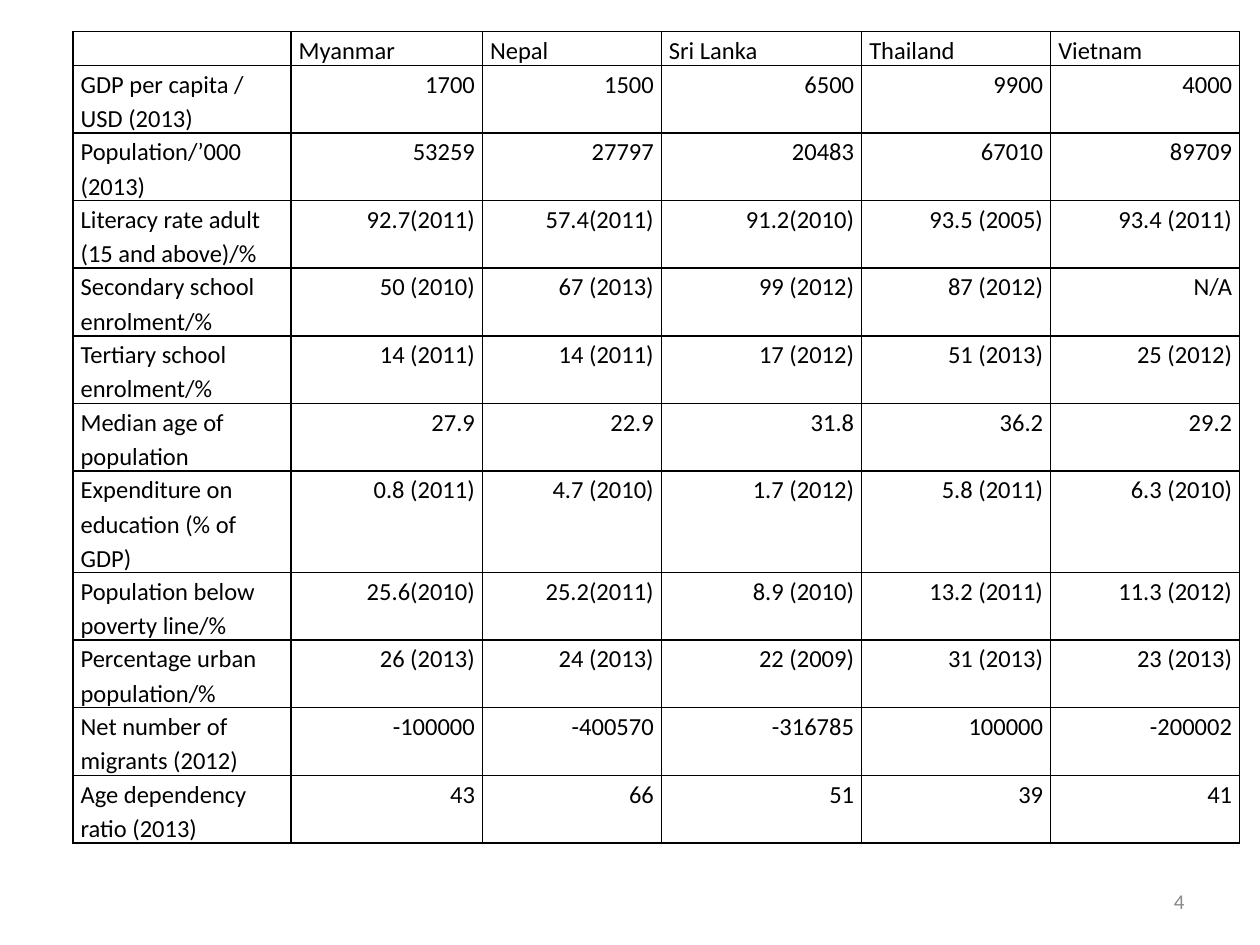
from lxml.etree import SubElement
from pptx import Presentation
from pptx.dml.color import RGBColor
from pptx.enum.text import MSO_ANCHOR, PP_ALIGN
from pptx.oxml import parse_xml
from pptx.oxml.ns import nsdecls, qn
from pptx.util import Inches, Pt

COLORS = {"text": "000000", "border": "000000", "number": "898989"}
FONT = "Calibri"
TABLE_SIZE = 14
SLIDE_WIDTH, SLIDE_HEIGHT = Inches(10), Inches(7.5)
GRID_COLUMNS, GRID_ROWS = 1000, 750
COLUMN_SPANS = [173, 152, 142, 159, 150, 150]
LINE_SPAN = 26.4
LINES_PER_ROW = [1, 2, 2, 2, 2, 2, 2, 3, 2, 2, 2, 2]
ROWS = [
    ["", "Myanmar", "Nepal", "Sri Lanka", "Thailand", "Vietnam"],
    ["GDP per capita / USD (2013)", "1700", "1500", "6500", "9900", "4000"],
    ["Population/’000 (2013)", "53259", "27797", "20483", "67010", "89709"],
    ["Literacy rate adult (15 and above)/%", "92.7(2011)", "57.4(2011)",
     "91.2(2010)", "93.5 (2005)", "93.4 (2011)"],
    ["Secondary school enrolment/%", "50 (2010)", "67 (2013)",
     "99 (2012)", "87 (2012)", "N/A"],
    ["Tertiary school enrolment/%", "14 (2011)", "14 (2011)",
     "17 (2012)", "51 (2013)", "25 (2012)"],
    ["Median age of population", "27.9", "22.9", "31.8", "36.2", "29.2"],
    ["Expenditure on education (% of GDP)", "0.8 (2011)", "4.7 (2010)",
     "1.7 (2012)", "5.8 (2011)", "6.3 (2010)"],
    ["Population below poverty line/%", "25.6(2010)", "25.2(2011)",
     "8.9 (2010)", "13.2 (2011)", "11.3 (2012)"],
    ["Percentage urban population/%", "26 (2013)", "24 (2013)",
     "22 (2009)", "31 (2013)", "23 (2013)"],
    ["Net number of migrants (2012)", "-100000", "-400570",
     "-316785", "100000", "-200002"],
    ["Age dependency ratio (2013)", "43", "66", "51", "39", "41"],
]


def across(columns):
    """Return the width of a number of grid columns."""
    return int(SLIDE_WIDTH * columns / GRID_COLUMNS)


def down(rows):
    """Return the height of a number of grid rows."""
    return int(SLIDE_HEIGHT * rows / GRID_ROWS)


def add_span(para, text, size, color):
    """Add one styled run to a paragraph."""
    span = para.add_run()
    span.text = text
    span.font.size = Pt(size)
    span.font.name = FONT
    span.font.color.rgb = RGBColor.from_string(COLORS[color])


def add_borders(cell):
    """Draw a thin line on all four sides of a cell."""
    properties = cell._tc.get_or_add_tcPr()
    for position, side in enumerate(("lnL", "lnR", "lnT", "lnB")):
        line = parse_xml(
            f'<a:{side} {nsdecls("a")} w="{Pt(1)}"><a:solidFill>'
            f'<a:srgbClr val="{COLORS["border"]}"/></a:solidFill></a:{side}>')
        properties.insert(position, line)


def fill_cell(cell, text, align):
    """Set the text, margins and outline of a table cell."""
    cell.margin_left = cell.margin_right = across(6)
    cell.margin_top = cell.margin_bottom = 0
    cell.fill.background()
    add_borders(cell)
    para = cell.text_frame.paragraphs[0]
    para.alignment = align
    para.line_spacing = 1.15
    para.space_before = Pt(6)
    if text:
        add_span(para, text, TABLE_SIZE, "text")
    else:
        SubElement(para._p, qn("a:endParaRPr"), sz=str(TABLE_SIZE * 100))


def add_country_table(page):
    """Add the table of country indicators."""
    heights = [LINE_SPAN * lines for lines in LINES_PER_ROW]
    table = page.shapes.add_table(
        len(ROWS), len(COLUMN_SPANS), across(58), down(25),
        across(sum(COLUMN_SPANS)), down(sum(heights))).table
    table.first_row = table.horz_banding = False
    for column, columns in zip(table.columns, COLUMN_SPANS):
        column.width = across(columns)
    for row, height in zip(table.rows, heights):
        row.height = down(height)
    for row_index, texts in enumerate(ROWS):
        for column_index, text in enumerate(texts):
            is_value = row_index > 0 and column_index > 0
            align = PP_ALIGN.RIGHT if is_value else PP_ALIGN.LEFT
            fill_cell(table.cell(row_index, column_index), text, align)


def add_page_number(page, number):
    """Add the page number at the lower right."""
    box = page.shapes.add_textbox(across(717), down(695), across(233), down(40))
    box.text_frame.word_wrap = True
    box.text_frame.vertical_anchor = MSO_ANCHOR.MIDDLE
    para = box.text_frame.paragraphs[0]
    para.alignment = PP_ALIGN.RIGHT
    add_span(para, number, 12, "number")


def main():
    """Build and save the deck."""
    deck = Presentation()
    deck.slide_width, deck.slide_height = SLIDE_WIDTH, SLIDE_HEIGHT
    page = deck.slides.add_slide(deck.slide_layouts[6])
    add_page_number(page, "4")
    add_country_table(page)
    deck.save("out.pptx")


if __name__ == "__main__":
    main()
